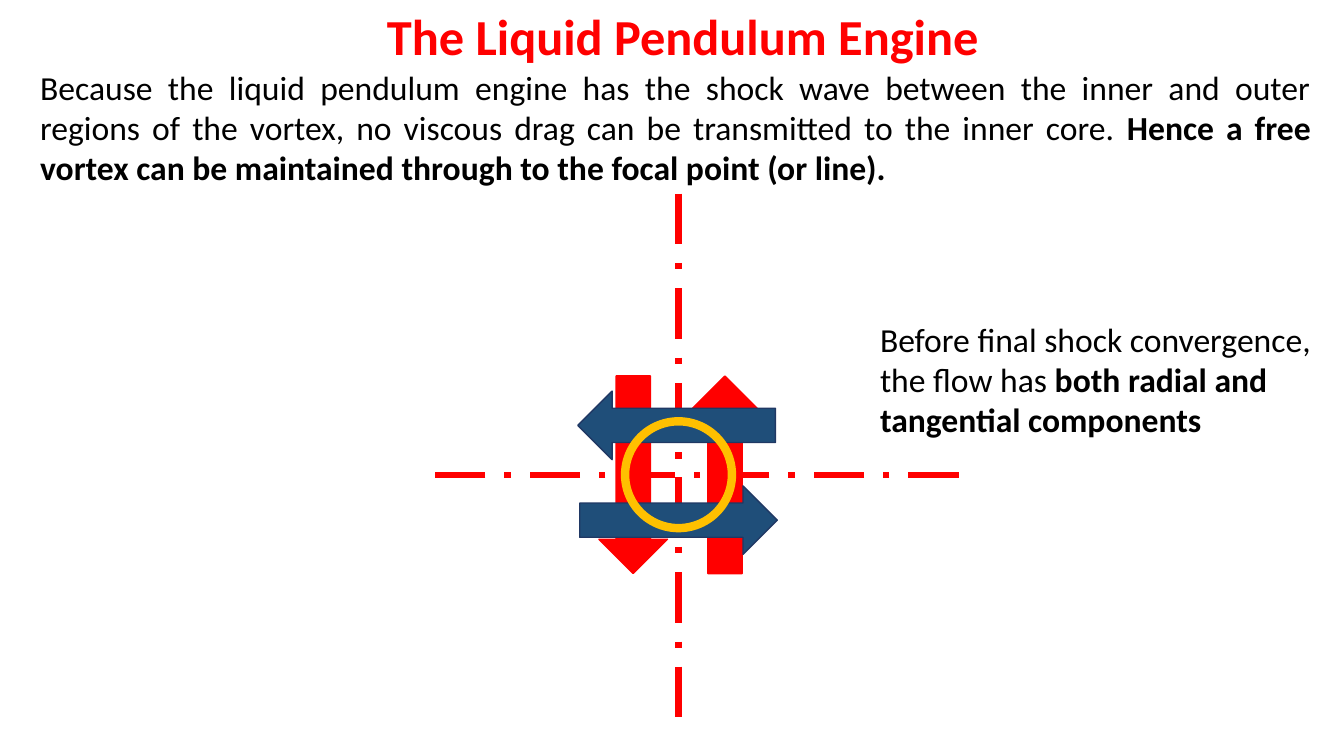
from lxml import etree
from pptx import Presentation
from pptx.dml.color import RGBColor
from pptx.enum import dml, shapes, text
from pptx.oxml.ns import qn
from pptx.util import Inches, Pt

RED, NAVY, NAVY_EDGE, GOLD, BLACK = "FF0000", "1F4E79", "203864", "FFC000", "000000"


def paint(fmt, color):
    """Set a solid colour on a fill or a font colour."""
    if hasattr(fmt, "solid"):
        fmt.solid()
        fmt = fmt.fore_color
    fmt.rgb = RGBColor.from_string(color)


def add_text(s, box, runs, size, color, align):
    tb = s.shapes.add_textbox(*map(Inches, box))
    tf = tb.text_frame
    tf.word_wrap = True
    tf.auto_size = text.MSO_AUTO_SIZE.SHAPE_TO_FIT_TEXT
    p = tf.paragraphs[0]
    p.alignment = align
    for words, bold in runs:
        r = p.add_run()
        r.text = words
        r.font.name = "Calibri"
        r.font.size = Pt(size)
        r.font.bold = bold
        paint(r.font.color, color)


prs = Presentation()
prs.slide_width, prs.slide_height = Inches(13.33), Inches(7.5)
s = prs.slides.add_slide(prs.slide_layouts[6])

# Centre lines
for ends in [(6.73, 1.92, 6.73, 7.16), (9.51, 4.71, 4.28, 4.71)]:
    axis = s.shapes.add_connector(shapes.MSO_CONNECTOR.STRAIGHT, *map(Inches, ends))
    paint(axis.line.fill, RED)
    axis.line.width = Pt(4.5)
    axis.line.dash_style = dml.MSO_LINE.LONG_DASH_DOT
    etree.SubElement(axis._element.spPr, qn("a:effectLst"))

# Flow arrows: radial pair in red, tangential pair in navy on top
ARROW_W, ARROW_L = 0.68, 1.96
for cx, cy, rotation, fill, edge in [
    (6.28, 4.71, 0, RED, RED),
    (7.19, 4.71, 180, RED, RED),
    (6.73, 5.16, 270, NAVY, NAVY_EDGE),
    (6.71, 4.22, 90, NAVY, NAVY_EDGE),
]:
    arrow = s.shapes.add_shape(
        shapes.MSO_SHAPE.DOWN_ARROW,
        Inches(cx - ARROW_W / 2), Inches(cy - ARROW_L / 2),
        Inches(ARROW_W), Inches(ARROW_L))
    arrow.rotation = rotation
    arrow.shadow.inherit = False
    paint(arrow.fill, fill)
    paint(arrow.line.fill, edge)
    arrow.line.width = Pt(1)

# Vortex core
core = s.shapes.add_shape(shapes.MSO_SHAPE.OVAL, Inches(6.2), Inches(4.18),
                          Inches(1.06), Inches(1.06))
core.shadow.inherit = False
core.fill.background()
paint(core.line.fill, GOLD)
core.line.width = Pt(6)

# Title, explanation and flow note
add_text(s, (2.31, 0, 8.93, 0.71), [("The Liquid Pendulum Engine", True)],
         36, RED, text.PP_ALIGN.CENTER)
add_text(s, (0.3, 0.61, 12.8, 1.31), [
    ("Because the liquid pendulum engine has the shock wave between the inner and "
     "outer regions of the vortex, no viscous drag can be transmitted to the inner "
     "core. ", False),
    ("Hence a free vortex can be maintained through to the focal point (or line).", True),
], 24, BLACK, text.PP_ALIGN.JUSTIFY)
add_text(s, (8.63, 3.11, 4.7, 1.31), [
    ("Before final shock convergence, the flow has ", False),
    ("both radial and tangential components", True),
], 24, BLACK, text.PP_ALIGN.LEFT)

prs.save("out.pptx")
